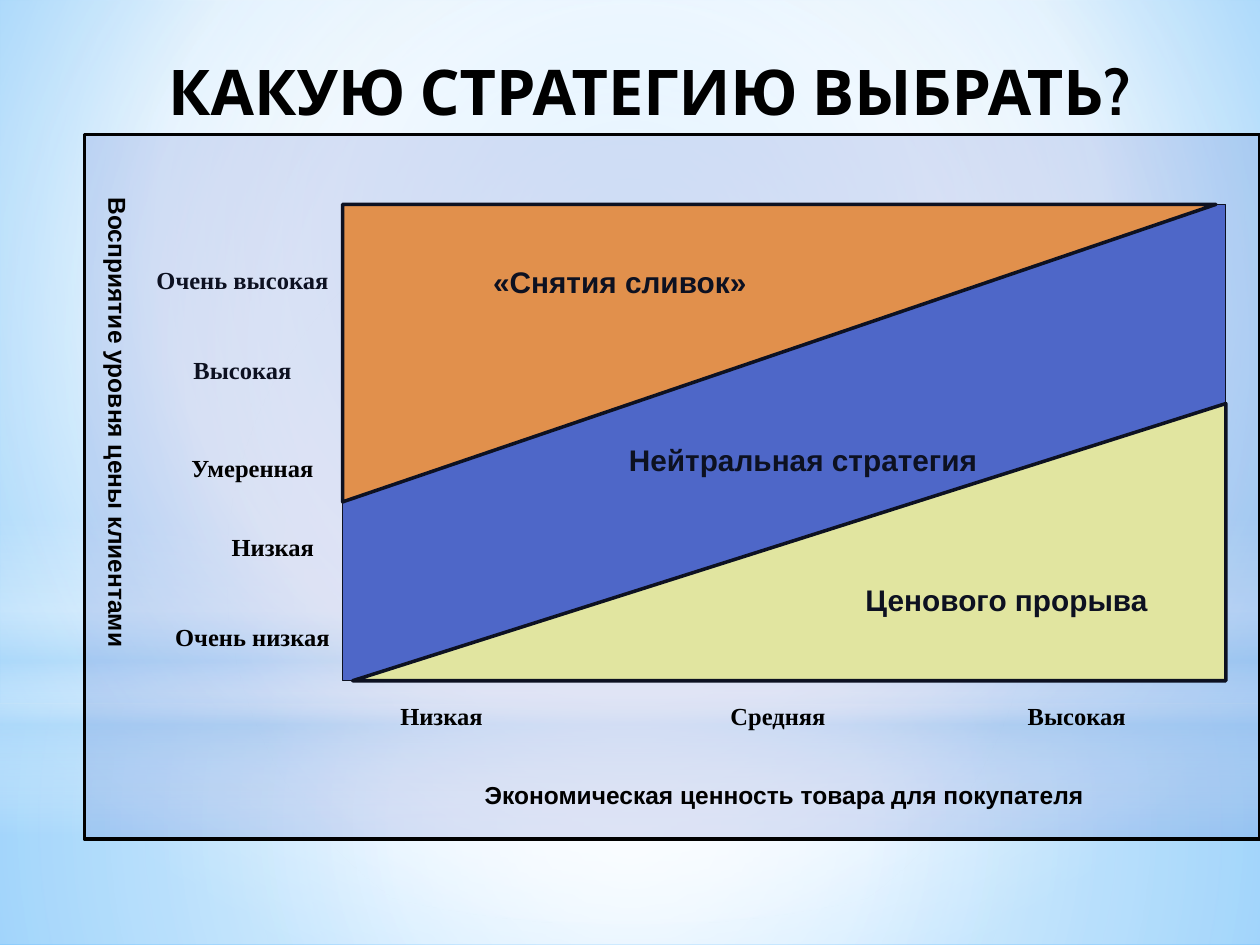
import pptx
import pptx.dml.color
import pptx.enum.shapes
import pptx.enum.text
import pptx.oxml
import pptx.oxml.ns
import pptx.util

Pt = pptx.util.Pt
SHAPE = pptx.enum.shapes.MSO_SHAPE
ALIGN = pptx.enum.text.PP_ALIGN

TITLE = "КАКУЮ СТРАТЕГИЮ ВЫБРАТЬ?"
BACKGROUND = ([(0, "9ED5FF", 100), (60, "FFFFFF", 100), (100, "5BB9FF", 100)], (20, 10, 20, 60))
CENTER = (50, 50, 50, 50)
HAZE = [
    (SHAPE.RECTANGLE, (0, 402, 720, 138),
     [(0, "FFFFFF", 91), (37, "FFFFFF", 76), (100, "B4DCFA", 79)], CENTER),
    (SHAPE.RECTANGLE, (0, 0, 720, 402),
     [(0, "FFFFFF", 89), (48, "FFFFFF", 62), (100, "B4DCFA", 79)], CENTER),
    (SHAPE.RECTANGLE, (0, 296.6, 720, 180),
     [(0, "FFFFFF", 0), (29, "FFFFFF", 30), (45, "B4DCFA", 40),
      (55, "FFFFFF", 26), (65, "B4DCFA", 60), (100, "FFFFFF", 0)], None),
    (SHAPE.OVAL, (0, 126, 720, 402), [(0, "FFFFFF", 100), (56, "FFFFFF", 0)], CENTER),
]
CHART = (195.8, 116.8, 504.7, 272.2)
TRIANGLE_W, SKIMMING_H, BREAKTHROUGH_H = 499, 170, 158.4
FRAME = (48.2, 77, 671.8, 402.5)
STRATEGIES = [
    ("«Снятия сливок»", (263.5, 151.2, 181.4, 34)),
    ("Нейтральная стратегия", (348.5, 252.7, 221, 22.3)),
    ("Ценового прорыва", (473, 332.6, 204.5, 34)),
]
LABEL_W, LABEL_H, VALUE_TOP = 124.6, 17.3, 400.3
TINTED_LEVELS = [("Очень высокая", 76.3, 151.2), ("Высокая", 76.3, 202.3)]
LEVELS = [("Умеренная", 82, 258.5), ("Низкая", 93.6, 303.8), ("Очень низкая", 82, 355)]
VALUES = [("Низкая", 190), ("Средняя", 382.3), ("Высокая", 553)]
Y_AXIS = ("Восприятие уровня цены клиентами", (54, 105.8, 22.3, 334.8))
X_AXIS = ("Экономическая ценность товара для покупателя", (201.6, 445.7, 493.2, 17.3))


def color(value):
    return pptx.dml.color.RGBColor.from_string(value)


def set_gradient(solid, stops, focus):
    gs = "".join(
        f'<a:gs pos="{pos * 1000}"><a:srgbClr val="{rgb}"><a:alpha val="{alpha * 1000}"/></a:srgbClr></a:gs>'
        for pos, rgb, alpha in stops)
    if focus:
        sides = " ".join(f'{side}="{n * 1000}"' for side, n in zip("ltrb", focus))
        direction = f'<a:path path="circle"><a:fillToRect {sides}/></a:path>'
    else:
        direction = '<a:lin ang="5400000" scaled="0"/>'
    grad = pptx.oxml.parse_xml(
        f'<a:gradFill {pptx.oxml.ns.nsdecls("a")} rotWithShape="1"><a:gsLst>{gs}</a:gsLst>{direction}</a:gradFill>')
    solid.getparent().replace(solid, grad)


def add_shape(kind, box, fill, line=None, rotation=0):
    x, y, w, h = box
    if rotation in (90, 270):
        x, y, w, h = x + (w - h) / 2, y + (h - w) / 2, h, w
    sp = s.shapes.add_shape(kind, Pt(x), Pt(y), Pt(w), Pt(h))
    sp.rotation = rotation
    sp.shadow.inherit = False
    sp.fill.solid()
    sp.fill.fore_color.rgb = color(fill)
    if line:
        sp.line.color.rgb = color("000000")
        sp.line.width = Pt(line)
    else:
        sp.line.fill.background()
    return sp


def write(tf, text, size=14, font="Times New Roman", align=ALIGN.CENTER):
    p = tf.paragraphs[0]
    p.alignment = align
    r = p.add_run()
    r.text = text
    r.font.size = Pt(size)
    r.font.name = font
    r.font.bold = True
    r.font.color.rgb = color("000000")
    return p


def add_text(text, box, vertical=False, **fmt):
    tf = s.shapes.add_textbox(*map(Pt, box)).text_frame
    tf.word_wrap = True
    p = write(tf, text, **fmt)
    p.line_spacing = 0.8
    p.space_before = Pt(0)
    pPr = p._p.get_or_add_pPr()
    pPr.set("marL", str(Pt(43.2)))
    pPr.set("indent", str(Pt(-43.2)))
    if vertical:
        tf._txBody.bodyPr.set("vert", "eaVert")


prs = pptx.Presentation()
prs.slide_width, prs.slide_height = Pt(720), Pt(540)
s = prs.slides.add_slide(prs.slide_layouts[5])

s.background.fill.solid()
set_gradient(s._element.xpath(".//p:bgPr/a:solidFill")[0], *BACKGROUND)
for kind, box, stops, focus in HAZE:
    sp = add_shape(kind, box, "FFFFFF")
    set_gradient(sp._element.xpath("./p:spPr/a:solidFill")[0], stops, focus)

title = s.shapes.title
s.shapes._spTree.append(title._element)
title.left, title.top, title.width, title.height = map(Pt, (54, 26, 635, 51))
write(title.text_frame, TITLE, size=36, font="Cabin")
title.text_frame.auto_size = pptx.enum.text.MSO_AUTO_SIZE.SHAPE_TO_FIT_TEXT

left, top, width, height = CHART
add_shape(SHAPE.RECTANGLE, CHART, "4E67C8", 0.75)
add_shape(SHAPE.RIGHT_TRIANGLE, (left, top, TRIANGLE_W, SKIMMING_H), "FF9933", 2, 90)
add_shape(SHAPE.RIGHT_TRIANGLE,
          (left + width - TRIANGLE_W, top + height - BREAKTHROUGH_H, TRIANGLE_W, BREAKTHROUGH_H),
          "FFFF99", 2, 270)
for text, box in STRATEGIES:
    add_text(text, box, size=17, font="Arial")
for text, x, y in TINTED_LEVELS:
    add_text(text, (x, y, LABEL_W, LABEL_H))

frame = add_shape(SHAPE.RECTANGLE, FRAME, "4E67C8", 2)
rgb = frame._element.xpath("./p:spPr/a:solidFill/a:srgbClr")[0]
rgb.append(pptx.oxml.parse_xml(f'<a:alpha {pptx.oxml.ns.nsdecls("a")} val="17000"/>'))

for text, x, y in LEVELS + [(text, x, VALUE_TOP) for text, x in VALUES]:
    add_text(text, (x, y, LABEL_W, LABEL_H))
add_text(*Y_AXIS, vertical=True, font="Arial", align=ALIGN.LEFT)
add_text(*X_AXIS, font="Arial")

prs.save("out.pptx")
